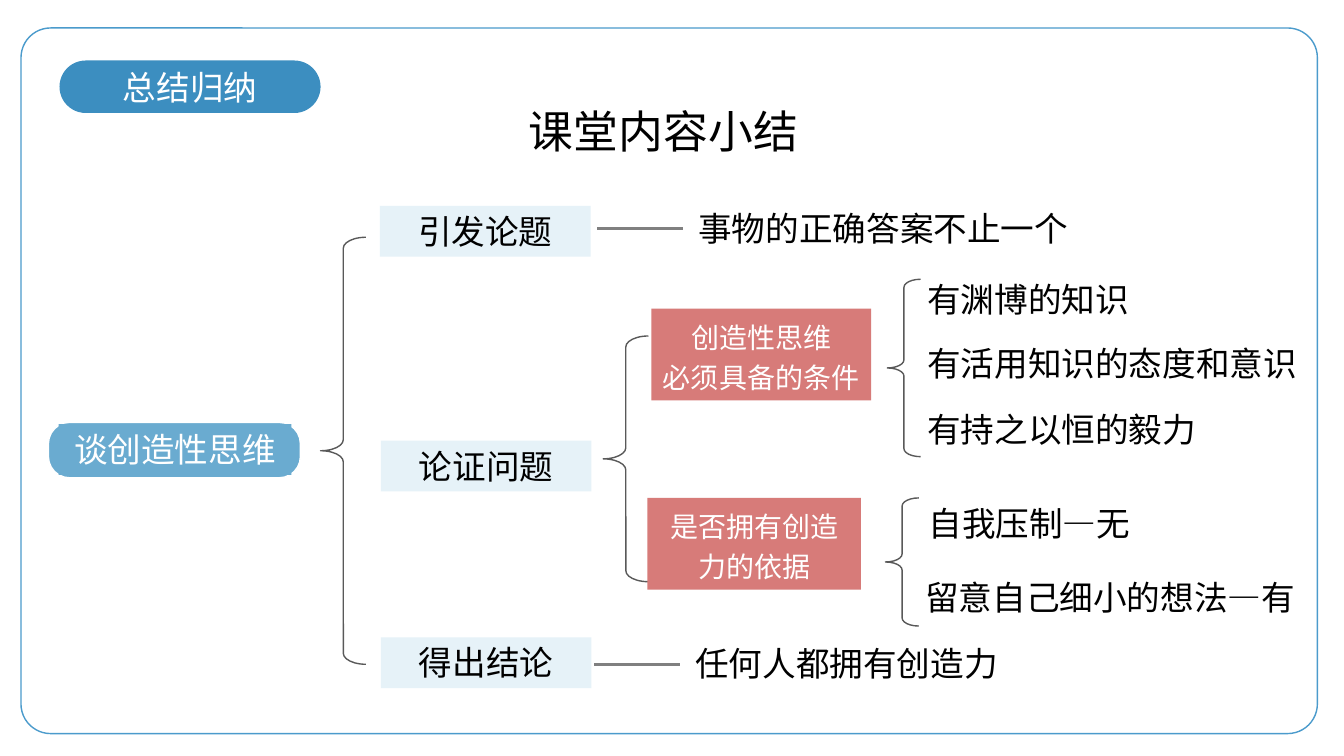
import pptx
import pptx.dml.color
import pptx.enum.shapes
import pptx.enum.text
import pptx.oxml
import pptx.oxml.ns
import pptx.util

Pt = pptx.util.Pt
KIND = pptx.enum.shapes.MSO_SHAPE
ALIGN = pptx.enum.text.PP_ALIGN
ANCHOR = pptx.enum.text.MSO_ANCHOR
FIT = pptx.enum.text.MSO_AUTO_SIZE
FACE = "Noto Sans CJK SC"
NS = pptx.oxml.ns.nsdecls("a")

BODY = {"size": Pt(24), "name": FACE}
TITLE = {"size": Pt(32), "name": FACE}
SMALL = {"size": Pt(20), "name": FACE}
BADGE = {"size": Pt(24), "name": "Calibri"}


def color(code):
    return pptx.dml.color.RGBColor.from_string(code)


def write(shape, text, font, ink="000000", align=ALIGN.CENTER, space=None,
          anchor=ANCHOR.TOP, fit=FIT.SHAPE_TO_FIT_TEXT):
    frame = shape.text_frame
    for key, value in {"word_wrap": True, "auto_size": fit,
                       "vertical_anchor": anchor}.items():
        setattr(frame, key, value)
    for num, line in enumerate(text.split("\n")):
        para = frame.add_paragraph() if num else frame.paragraphs[0]
        para.alignment, para.line_spacing = align, space
        run = para.add_run()
        run.text = line
        run.font.color.rgb = color(ink)
        for key, value in font.items():
            setattr(run.font, key, value)
        # East Asian glyphs take their own typeface element.
        run.font._element.find(pptx.oxml.ns.qn("a:latin")).addnext(
            pptx.oxml.parse_xml(f'<a:ea {NS} typeface="{FACE}"/>'))


def shape(home, kind, box, fill=None, line=None, adjust=()):
    item = home.add_shape(kind, *map(Pt, box))
    item.shadow.inherit = False
    for num, value in enumerate(adjust):
        item.adjustments[num] = value
    if fill:
        item.fill.solid()
        item.fill.fore_color.rgb = color(fill)
    else:
        item.fill.background()
    if line:
        item.line.color.rgb = color(line)
        item.line.width = Pt(1)
    else:
        item.line.fill.background()
    return item


def brace(home, *box):
    shape(home, KIND.LEFT_BRACE, box, line="595959", adjust=(0.243, 0.5))


def label(home, text, box, space=None):
    item = home.add_textbox(*map(Pt, box))
    write(item, text, BODY, align=ALIGN.LEFT, space=space)


def rule(home, left, right, top):
    item = home.add_connector(pptx.enum.shapes.MSO_CONNECTOR.STRAIGHT,
                              Pt(left), Pt(top), Pt(right), Pt(top))
    item.line.color.rgb = color("808080")
    item.line.width = Pt(2)
    item._element.spPr.append(pptx.oxml.parse_xml(f"<a:effectLst {NS}/>"))


def header(home):
    badge = shape(home, KIND.ROUNDED_RECTANGLE, (42.5, 43.2, 186.5, 37.5),
                  "3C8EC0", adjust=(0.5,))
    write(badge, "总结归纳", BADGE, "FFFFFF",
          anchor=ANCHOR.MIDDLE, fit=FIT.NONE)
    shape(home, KIND.ROUNDED_RECTANGLE, (15, 20, 926, 504),
          line="4B9BCC", adjust=(0.042,))
    title = shape(home, KIND.ROUNDED_RECTANGLE, (326, 73.5, 296, 39),
                  adjust=(0.5,))
    write(title, "课堂内容小结", TITLE, anchor=ANCHOR.MIDDLE, fit=FIT.NONE)


def topic(home):
    group = home.add_group_shape().shapes
    shape(group, KIND.ROUNDED_RECTANGLE, (34.6, 301.7, 180, 39.6),
          "6AABD0", "FFFFFF", (0.384,))
    name = shape(group, KIND.RECTANGLE, (41.8, 303, 166.3, 36.3), "6AABD0")
    write(name, "谈创造性思维", BODY, "FFFFFF")


def main():
    deck = pptx.Presentation()
    deck.slide_width, deck.slide_height = Pt(960), Pt(540)
    home = deck.slides.add_slide(deck.slide_layouts[6]).shapes
    header(home)
    topic(home)

    brace(home, 229, 169.5, 32.4, 305)
    for text, left, top in (("引发论题", 271.4, 147), ("论证问题", 272, 314.8),
                            ("得出结论", 272, 455.2)):
        step = shape(home, KIND.RECTANGLE, (left, top, 150.5, 36.3), "E6F2F8")
        write(step, text, BODY)
    for text, left, top in (("事物的正确答案不止一个", 491.8, 144.7),
                            ("任何人都拥有创造力", 489.6, 456)):
        label(home, text, (left, top, 460, 36.3))
        rule(home, left - 65.2, left - 4.2, top + 18.6)

    brace(home, 430.8, 240, 32.4, 175.5)
    for text, left, top, width in (
            ("创造性思维\n必须具备的条件", 465.2, 220.5, 157),
            ("是否拥有创造力的依据", 462.5, 355.7, 152.5)):
        cause = shape(home, KIND.RECTANGLE, (left, top, width, 65.5), "D77B79")
        write(cause, text, SMALL, "FFFFFF", space=1.2)

    brace(home, 633.8, 199.5, 23.8, 126.7)
    for text, top, width in (("有渊博的知识", 195.8, 170),
                             ("有活用知识的态度和意识", 241.5, 285),
                             ("有持之以恒的毅力", 288.3, 218)):
        label(home, text, (655.3, top, width, 36.3))

    brace(home, 632.5, 355.7, 23.8, 91.5)
    label(home, "自我压制—无", (656.2, 341.3, 212.5, 51), 1.5)
    label(home, "留意自己细小的想法—有", (653.8, 393.8, 279.5, 51), 1.5)
    deck.save("out.pptx")


if __name__ == "__main__":
    main()
